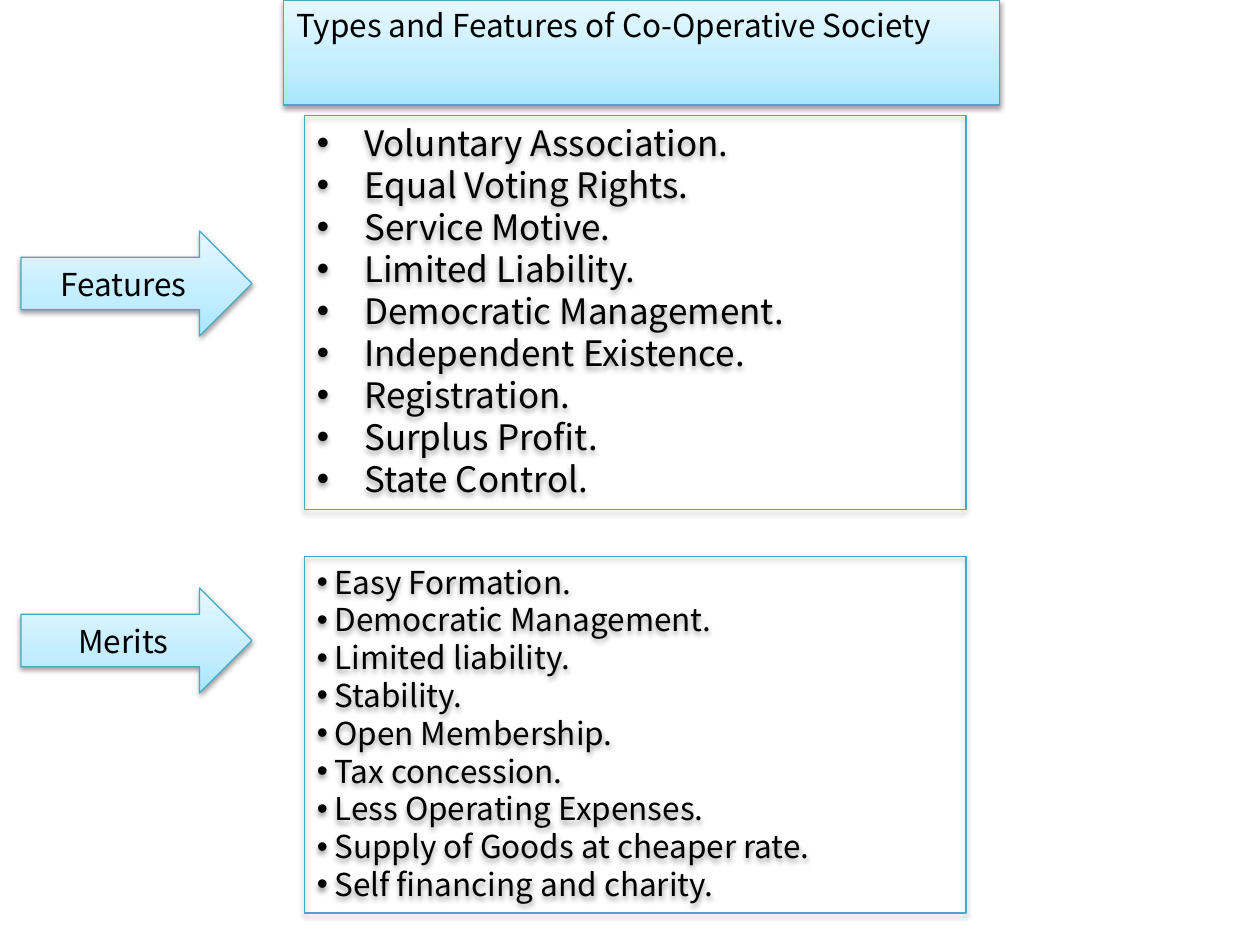
"""Builds a slide on the features and merits of a co-operative society."""
from copy import deepcopy

from lxml import etree
from pptx import Presentation
from pptx.dml.color import RGBColor
from pptx.enum.shapes import MSO_SHAPE
from pptx.enum.text import MSO_ANCHOR, MSO_AUTO_SIZE, PP_ALIGN
from pptx.oxml.ns import qn
from pptx.util import Pt

RECT, ARROW = MSO_SHAPE.RECTANGLE, MSO_SHAPE.RIGHT_ARROW
TOP, MIDDLE = MSO_ANCHOR.TOP, MSO_ANCHOR.MIDDLE
LEFT, CENTER = PP_ALIGN.LEFT, PP_ALIGN.CENTER
GROW, FIXED = MSO_AUTO_SIZE.SHAPE_TO_FIT_TEXT, MSO_AUTO_SIZE.NONE
FONT = "Noto Sans CJK KR"
COLORS = {"text": "000000", "line": "46AAC5", "shadow": "000000",
          "deep": "A7E6FF", "mid": "C1EDFF", "pale": "E7F8FF"}
STOPS = [("deep", 0), ("mid", 0.35), ("pale", 1)]


def style(sp, filled=True):
    """Give a shape its fill, outline and shadow."""
    if filled:
        sp.fill.gradient()
        sp.fill.gradient_angle = 90
        stop_list = sp._element.spPr.find(".//" + qn("a:gsLst"))
        stop_list.append(deepcopy(stop_list[-1]))
        for stop, (name, position) in zip(sp.fill.gradient_stops, STOPS):
            stop.color.rgb = RGBColor.from_string(COLORS[name])
            stop.position = position
    else:
        sp.fill.background()
    sp.line.color.rgb = RGBColor.from_string(COLORS["line"])
    sp.line.width = Pt(0.75)
    sp.shadow.inherit = False
    effects = sp._element.spPr.find(qn("a:effectLst"))
    shadow = etree.SubElement(effects, qn("a:outerShdw"), blurRad=str(Pt(3.1)),
                              dist=str(Pt(1.6)), dir="5400000", rotWithShape="0")
    color = etree.SubElement(shadow, qn("a:srgbClr"), val=COLORS["shadow"])
    etree.SubElement(color, qn("a:alpha"), val="38000")


def write(sp, lines, size=18, align=LEFT, anchor=TOP, fit=GROW, wrap=True, indent=0):
    """Write paragraphs into a shape, with bullets where there is an indent."""
    tf = sp.text_frame
    tf.word_wrap = wrap
    tf.auto_size = fit
    tf.vertical_anchor = anchor
    for i, line in enumerate(lines):
        p = tf.paragraphs[0] if i == 0 else tf.add_paragraph()
        p.alignment = align
        if indent:
            pPr = p._p.get_or_add_pPr()
            pPr.set("marL", str(Pt(indent)))
            pPr.set("indent", str(-Pt(indent)))
            etree.SubElement(pPr, qn("a:buFont"), typeface="Arial")
            etree.SubElement(pPr, qn("a:buChar"), char="•")
        r = p.add_run()
        r.text = line
        r.font.size = Pt(size)
        r.font.name = FONT
        r.font.color.rgb = RGBColor.from_string(COLORS["text"])


prs = Presentation()
prs.slide_width, prs.slide_height = Pt(720), Pt(540)
s = prs.slides.add_slide(prs.slide_layouts[5])

title = s.shapes.title
title.left, title.top, title.width, title.height = Pt(162), Pt(0), Pt(409), Pt(29)
style(title)
write(title, ["Types and Features of Co-Operative Society"], wrap=False)

features = ["Voluntary Association.", "Equal Voting Rights.", "Service Motive.",
            "Limited Liability.", "Democratic Management.", "Independent Existence.",
            "Registration.", "Surplus Profit.", "State Control."]
merits = ["Easy Formation.", "Democratic Management.", "Limited liability.",
          "Stability.", "Open Membership.", "Tax concession.",
          "Less Operating Expenses.", "Supply of Goods at cheaper rate.",
          "Self financing and charity."]
sections = [("Features", 132, features, 66, 225.4, 20, 27),
            ("Merits", 336, merits, 318, 203.8, 18, 10)]

for label, arrow_top, items, top, height, size, indent in sections:
    box = s.shapes.add_shape(RECT, Pt(174), Pt(top), Pt(378), Pt(height))
    style(box, filled=False)
    write(box, items, size=size, indent=indent)

    arrow = s.shapes.add_shape(ARROW, Pt(12), Pt(arrow_top), Pt(132), Pt(60))
    style(arrow)
    write(arrow, [label], align=CENTER, anchor=MIDDLE, fit=FIXED)

prs.save("out.pptx")
